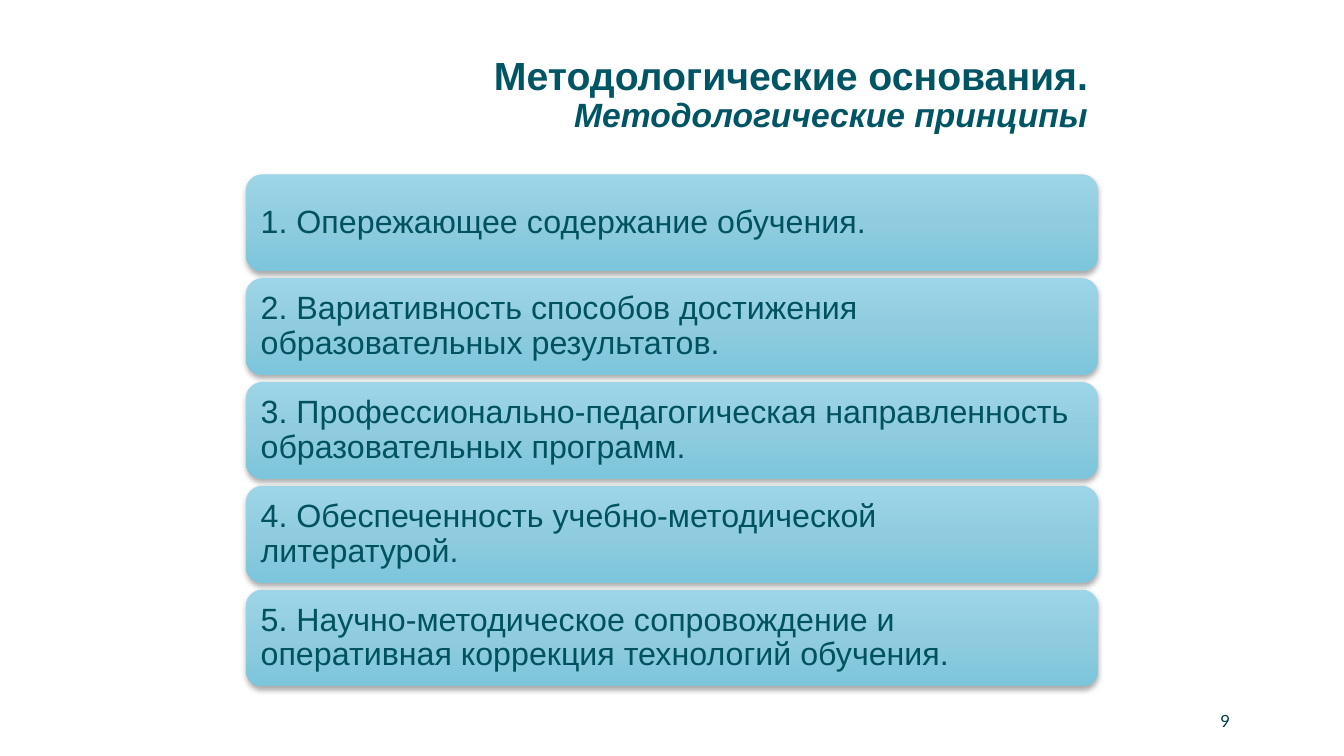
from copy import deepcopy

from lxml import etree
from pptx import Presentation
from pptx.dml.color import RGBColor
from pptx.enum.shapes import MSO_SHAPE
from pptx.enum.text import MSO_ANCHOR, PP_ALIGN
from pptx.oxml.ns import qn
from pptx.util import Inches, Pt

ROUNDED = MSO_SHAPE.ROUNDED_RECTANGLE
TOP, MIDDLE = MSO_ANCHOR.TOP, MSO_ANCHOR.MIDDLE
LEFT, RIGHT = PP_ALIGN.LEFT, PP_ALIGN.RIGHT
TITLE_ONLY = 5

COLORS = {
    "title": "005564",
    "principle": "005260",
    "number": "023F47",
    "shadow": "000000",
}
GRADIENT = [(0, "9DD5E8"), (0.5, "90CCDF"), (1, "7CC5DB")]

PRINCIPLES = [
    "1. Опережающее содержание обучения.",
    "2. Вариативность способов достижения образовательных результатов.",
    "3. Профессионально-педагогическая направленность образовательных программ.",
    "4. Обеспеченность учебно-методической литературой.",
    "5. Научно-методическое сопровождение и оперативная коррекция технологий обучения.",
]
CARD_LEFT, CARD_TOP, CARD_WIDTH, CARD_HEIGHT = 2.44, 1.73, 8.45, 0.96
CARD_STEP = 1.03


class SlideBuilder:
    def __init__(self, slide, font_name="Arial"):
        self.slide = slide
        self.font_name = font_name

    def style(self, font, size, color, name=None):
        font.name = name or self.font_name
        font.size = Pt(size)
        font.color.rgb = RGBColor.from_string(COLORS[color])

    def title(self, heading, subheading):
        title = self.slide.shapes.title
        title.left, title.top = Inches(2.94), Inches(0.51)
        title.width, title.height = Inches(7.95), Inches(1.32)
        frame = title.text_frame
        frame.word_wrap = True
        frame.vertical_anchor = TOP
        paragraph = frame.paragraphs[0]
        paragraph.alignment = RIGHT
        paragraph.line_spacing = 0.9
        for text, size, italic in ((heading, 28, False), (subheading, 24, True)):
            run = paragraph.add_run()
            run.text = text
            self.style(run.font, size, "title")
            run.font.bold = True
            run.font.italic = italic

    def card(self, text, top):
        card = self.slide.shapes.add_shape(
            ROUNDED, Inches(CARD_LEFT), Inches(top), Inches(CARD_WIDTH), Inches(CARD_HEIGHT))
        card.line.fill.background()
        self.gradient(card)
        self.shadow(card)
        frame = card.text_frame
        frame.word_wrap = True
        frame.vertical_anchor = MIDDLE
        frame.margin_left = frame.margin_right = Inches(0.1)
        frame.margin_top = frame.margin_bottom = Inches(0.1)
        paragraph = frame.paragraphs[0]
        paragraph.text = text
        paragraph.alignment = LEFT
        paragraph.line_spacing = 0.9
        self.style(paragraph.font, 23, "principle")

    def gradient(self, shape):
        """Fill the shape from top to bottom with the three gradient stops."""
        shape.fill.gradient()
        shape.fill.gradient_angle = 270
        stop_list = shape.element.spPr.find(".//" + qn("a:gsLst"))
        stop_list.insert(1, deepcopy(stop_list[0]))
        for stop, (position, color) in zip(shape.fill.gradient_stops, GRADIENT):
            stop.position = position
            stop.color.rgb = RGBColor.from_string(color)

    def shadow(self, shape):
        shape.shadow.inherit = False
        effects = shape.element.spPr.find(qn("a:effectLst"))
        outer = etree.SubElement(
            effects, qn("a:outerShdw"), blurRad=str(Pt(3.5)), dist=str(Pt(2.2)),
            dir="5400000", rotWithShape="0")
        color = etree.SubElement(outer, qn("a:srgbClr"), val=COLORS["shadow"])
        etree.SubElement(color, qn("a:alpha"), val="32000")

    def slide_number(self, number):
        box = self.slide.shapes.add_textbox(
            Inches(11.83), Inches(6.95), Inches(0.47), Inches(0.4))
        frame = box.text_frame
        frame.word_wrap = True
        frame.vertical_anchor = MIDDLE
        paragraph = frame.paragraphs[0]
        paragraph.text = str(number)
        paragraph.alignment = RIGHT
        self.style(paragraph.font, 12, "number", "Lato")


def main():
    presentation = Presentation()
    presentation.slide_width, presentation.slide_height = Inches(13.33), Inches(7.5)
    slide = presentation.slides.add_slide(presentation.slide_layouts[TITLE_ONLY])
    builder = SlideBuilder(slide)
    builder.slide_number(9)
    builder.title("Методологические основания. ", "Методологические принципы")
    for index, principle in enumerate(PRINCIPLES):
        builder.card(principle, CARD_TOP + index * CARD_STEP)
    presentation.save("out.pptx")


if __name__ == "__main__":
    main()
